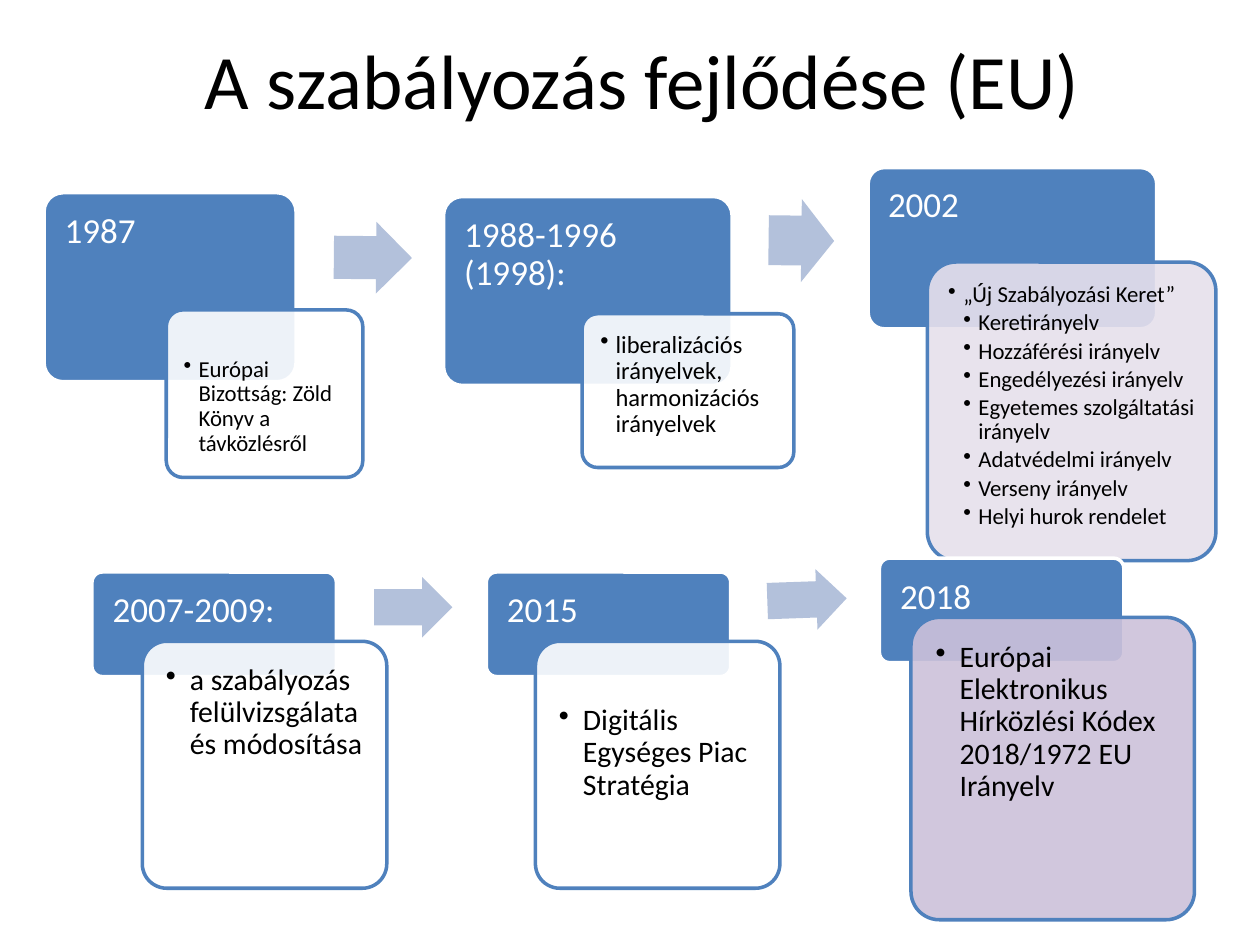
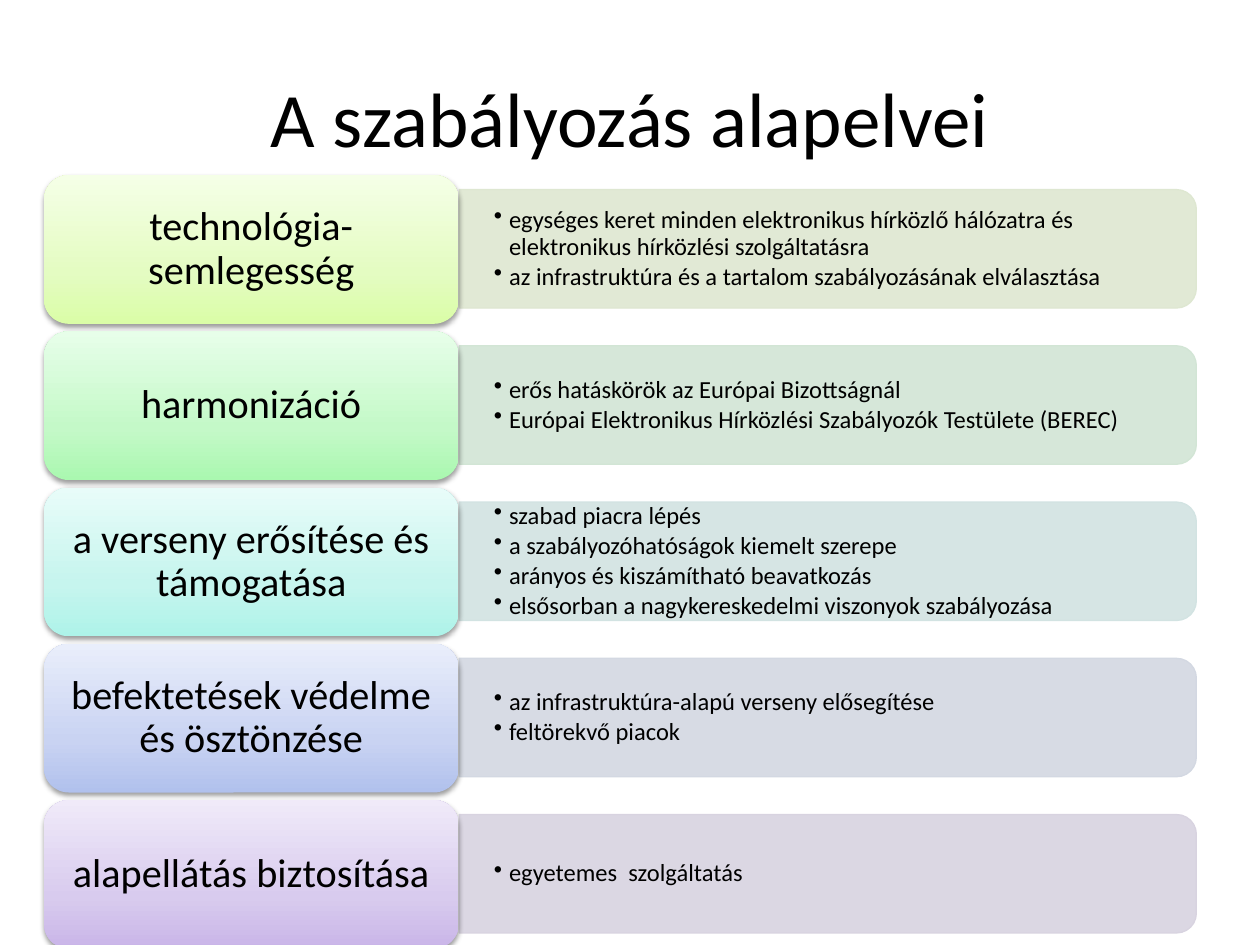
from dataclasses import dataclass
from typing import NamedTuple

from lxml.etree import SubElement as Sub
from pptx import Presentation as Deck
from pptx.dml.color import RGBColor as Rgb
from pptx.enum.shapes import MSO_SHAPE as Kind
from pptx.enum.text import MSO_ANCHOR as Anchor, PP_ALIGN as Align
from pptx.oxml.ns import qn
from pptx.util import Emu, Pt

PX = 9144  # 100 px to the inch


@dataclass(frozen=True)
class Theme:
    font: str = "Calibri"
    ink: str = "000000"
    paper: str = "FFFFFF"
    blue: str = "4F81BD"
    arrow: str = "B3C1DB"
    pale: str = "E6E0EC"
    mauve: str = "CCC1DA"
    title: int = 44
    head: int = 20
    tab: int = 23
    point: int = 14
    edge: int = 2
    hair: float = 0.75


T = Theme()


class Box(NamedTuple):
    x: int
    y: int
    w: int
    h: int


class Line(NamedTuple):
    text: str
    level: int = 1


class Style(NamedTuple):
    size: int
    hang: int
    pad: int


SMALL, MID, BIG = Style(13, 12, 10), Style(14, 12, 11), Style(17, 19, 13)


@dataclass(frozen=True)
class Card:
    year: str
    head: Box
    body: Box
    style: Style
    lines: list[Line]
    fill: str = T.paper
    drop: int = 0  # extra space above the list


class Arrow(NamedTuple):
    box: Box
    turn: float


class Rule(NamedTuple):
    name: str
    bar: str
    fade: tuple[str, str, str]
    lines: list[Line]


CARDS = [
    Card("1987", Box(35, 153, 200, 150), Box(132, 246, 156, 133), SMALL,
         [Line("Európai Bizottság: Zöld Könyv a távközlésről")], drop=24),
    Card("1988-1996 (1998):", Box(352, 156, 229, 150),
         Box(462, 249, 168, 122), MID,
         [Line("liberalizációs irányelvek, harmonizációs irányelvek")]),
    Card("2002", Box(689, 133, 229, 128), Box(736, 208, 229, 237), SMALL,
         [Line("„Új Szabályozási Keret”"),
          Line("Keretirányelv", 2),
          Line("Hozzáférési irányelv", 2),
          Line("Engedélyezési irányelv", 2),
          Line("Egyetemes szolgáltatási irányelv", 2),
          Line("Adatvédelmi irányelv", 2),
          Line("Verseny irányelv", 2),
          Line("Helyi hurok rendelet", 2)], T.pale),
    Card("2007-2009:", Box(73, 454, 194, 83), Box(113, 509, 194, 196), BIG,
         [Line("a szabályozás felülvizsgálata és módosítása")]),
    Card("2015", Box(386, 454, 194, 83), Box(425, 509, 194, 196), BIG,
         [Line("Digitális Egységes Piac Stratégia")], drop=32),
    Card("2018", Box(698, 443, 194, 83), Box(723, 490, 225, 240), BIG,
         [Line("Európai Elektronikus Hírközlési Kódex 2018/1972 EU Irányelv")],
         T.mauve),
]

ARROWS = [
    Arrow(Box(265, 176, 62, 57), 0.5),
    Arrow(Box(610, 158, 52, 66), 0.7),
    Arrow(Box(297, 458, 62, 48), 0),
    Arrow(Box(609, 452, 63, 48), 358),
]

RULES = [
    Rule("technológia-semlegesség", "DEE7D1", ("DAFDA7", "E4FCC2", "F5FFE7"),
         [Line("egységes keret minden elektronikus hírközlő hálózatra és "
               "elektronikus hírközlési szolgáltatásra"),
          Line("az infrastruktúra és a tartalom szabályozásának "
               "elválasztása")]),
    Rule("harmonizáció", "D2E5D5", ("AAF8B0", "C4F9C8", "E7FEE9"),
         [Line("erős hatáskörök az Európai Bizottságnál"),
          Line("Európai Elektronikus Hírközlési Szabályozók Testülete "
               "(BEREC)")]),
    Rule("a verseny erősítése és támogatása", "D2E3E2",
         ("AEF3E9", "C6F5EE", "E8FCF9"),
         [Line("szabad piacra lépés"),
          Line("a szabályozóhatóságok kiemelt szerepe"),
          Line("arányos és kiszámítható beavatkozás"),
          Line("elsősorban a nagykereskedelmi viszonyok szabályozása")]),
    Rule("befektetések védelme és ösztönzése", "D3D8E2",
         ("B1C1ED", "C9D3F2", "E9EEFB"),
         [Line("az infrastruktúra-alapú verseny elősegítése"),
          Line("feltörekvő piacok")]),
    Rule("alapellátás biztosítása", "D8D3E0", ("C9B5E8", "D8CBEE", "F0EAF9"),
         [Line("egyetemes  szolgáltatás")]),
]
STEP = 124


def emu(box: Box) -> list[Emu]:
    return [Emu(n * PX) for n in box]


def add_run(para, text: str, size: int, color: str = T.ink) -> None:
    run = para.add_run()
    run.text = text
    run.font.name, run.font.size = T.font, Pt(size)
    run.font.color.rgb = Rgb.from_string(color)


def set_frame(shape, pads: tuple[int, int, int, int], anchor=Anchor.TOP):
    """Set the insets (left, top, right, bottom) and give the text frame."""
    frame = shape.text_frame
    frame.word_wrap, frame.vertical_anchor = True, anchor
    (frame.margin_left, frame.margin_top,
     frame.margin_right, frame.margin_bottom) = [Emu(n * PX) for n in pads]
    return frame


def add_label(frame, text: str, size: int, color: str, align) -> None:
    para = frame.paragraphs[0]
    para.alignment, para.line_spacing = align, 0.9
    add_run(para, text, size, color)


def add_list(frame, lines: list[Line], size: int, hang: int) -> None:
    for i, line in enumerate(lines):
        para = frame.add_paragraph() if i else frame.paragraphs[0]
        para.alignment, para.line_spacing = Align.LEFT, 0.9
        para.space_after = Pt(2)
        props = para._p.get_or_add_pPr()
        props.set("marL", str(line.level * hang * PX))
        props.set("indent", str(-hang * PX))
        Sub(props, qn("a:buChar"), char="•")
        add_run(para, line.text, size)


def add_form(slide, kind, box: Box, fill: str, edge: str = "",
             width: float = T.edge, alpha: int = 100):
    """Add a flat shape; alpha, in percent, is for the fill alone."""
    form = slide.shapes.add_shape(kind, *emu(box))
    form.shadow.inherit = False
    form.fill.solid()
    form.fill.fore_color.rgb = Rgb.from_string(fill)
    if alpha < 100:
        tint = form._element.spPr.find(qn("a:solidFill"))[0]
        Sub(tint, qn("a:alpha"), val=str(alpha * 1000))
    if edge:
        form.line.color.rgb = Rgb.from_string(edge)
        form.line.width = Pt(width)
    else:
        form.line.fill.background()
    return form


def set_fade(form, colors: tuple[str, str, str]) -> None:
    """Fill with three colours, from the bottom up."""
    form.fill.gradient()
    form.fill.gradient_angle = 90
    stops = form._element.spPr.find(".//" + qn("a:gsLst"))
    stops.clear()
    for place, color in zip((0, 35, 100), colors):
        stop = Sub(stops, qn("a:gs"), pos=str(place * 1000))
        Sub(stop, qn("a:srgbClr"), val=color)


def set_shade(form) -> None:
    """Drop a soft shadow below the shape."""
    cast = Sub(form._element.spPr.find(qn("a:effectLst")), qn("a:outerShdw"),
               blurRad="40000", dist="20000", dir="5400000", rotWithShape="0")
    tint = Sub(cast, qn("a:srgbClr"), val=T.ink)
    Sub(tint, qn("a:alpha"), val="38000")


def add_page(deck, title: str, box: Box):
    slide = deck.slides.add_slide(deck.slide_layouts[5])
    name = slide.shapes.title
    name.left, name.top, name.width, name.height = emu(box)
    name.text_frame.vertical_anchor = Anchor.MIDDLE
    para = name.text_frame.paragraphs[0]
    para.alignment = Align.CENTER
    add_run(para, title, T.title)
    return slide


def add_card(slide, card: Card) -> None:
    head = add_form(slide, Kind.ROUNDED_RECTANGLE, card.head, T.blue, T.paper)
    body = add_form(slide, Kind.ROUNDED_RECTANGLE, card.body, card.fill,
                    T.blue, alpha=90)
    for form in (head, body):
        form.adjustments[0] = 0.1
    # the round corners already push the text in by 0.03 of the short side
    pad = 16 - round(0.03 * min(card.head.w, card.head.h))
    add_label(set_frame(head, (pad, pad, pad, 8)), card.year, T.head,
              T.paper, Align.LEFT)
    size, hang, pad = card.style
    frame = set_frame(body, (pad, pad + card.drop, pad, pad))
    add_list(frame, card.lines, size, hang)


def add_arrow(slide, arrow: Arrow) -> None:
    form = add_form(slide, Kind.RIGHT_ARROW, arrow.box, T.arrow)
    form.rotation = arrow.turn
    form.adjustments[0], form.adjustments[1] = 0.6, 0.5


def add_rule(slide, rule: Rule, shift: int) -> None:
    wide, high = 585, 94
    turn = (wide - high) // 2
    bar = add_form(slide, Kind.ROUND_2_SAME_RECTANGLE,
                   Box(365 + turn, 150 + shift - turn, high, wide),
                   rule.bar, rule.bar, T.hair, 90)
    bar.rotation = 90
    note = slide.shapes.add_textbox(*emu(Box(365, 155 + shift, 581, 85)))
    frame = set_frame(note, (27, 14, 27, 14), Anchor.MIDDLE)
    add_list(frame, rule.lines, T.point, MID.hang)
    tab = add_form(slide, Kind.ROUNDED_RECTANGLE,
                   Box(35, 139 + shift, 329, 118), rule.fade[0])
    set_fade(tab, rule.fade)
    set_shade(tab)
    add_label(set_frame(tab, (10, 5, 10, 5), Anchor.MIDDLE), rule.name,
              T.tab, T.ink, Align.CENTER)


def main() -> None:
    deck = Deck()
    deck.slide_width, deck.slide_height = Emu(1000 * PX), Emu(750 * PX)

    past = add_page(deck, "A szabályozás fejlődése (EU)", Box(60, 0, 900, 125))
    for card in CARDS:
        add_card(past, card)
    for arrow in ARROWS:
        add_arrow(past, arrow)

    base = add_page(deck, "A szabályozás alapelvei", Box(50, 30, 900, 125))
    for i, rule in enumerate(RULES):
        add_rule(base, rule, i * STEP)

    deck.save("out.pptx")


if __name__ == "__main__":
    main()
